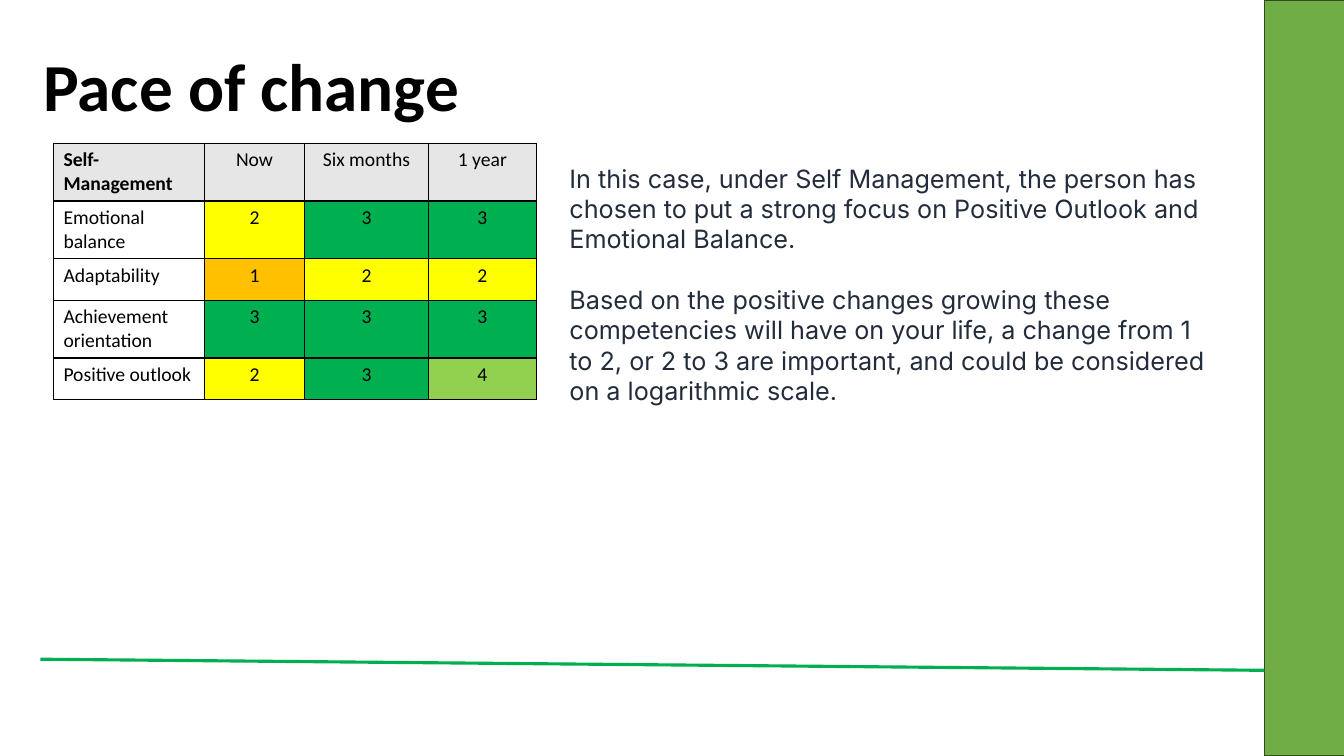
from dataclasses import dataclass

from lxml.etree import SubElement
from pptx import Presentation
from pptx.dml.color import RGBColor
from pptx.enum.shapes import MSO_CONNECTOR, MSO_SHAPE
from pptx.enum.text import MSO_ANCHOR, PP_ALIGN
from pptx.oxml.ns import qn
from pptx.util import Inches, Pt

BLACK, GREEN, HEADER_GREY = "000000", "00B050", "E7E6E6"
SCORE_FILLS = {1: "FFC000", 2: "FFFF00", 3: GREEN, 4: "92D050"}
HEADINGS = ["Self-Management", "Now", "Six months", "1 year"]
COLUMN_WIDTHS = [1.5, 0.99, 1.23, 1.07]
ROW_HEIGHT = 0.41
COMMENTS = [
    "In this case, under Self Management, the person has chosen to put a strong "
    "focus on Positive Outlook and Emotional Balance.",
    "Based on the positive changes growing these competencies will have on your "
    "life, a change from 1 to 2, or 2 to 3 are important, and could be considered "
    "on a logarithmic scale.",
]


@dataclass
class Competency:
    name: str
    scores: tuple[int, int, int]


COMPETENCIES = [
    Competency("Emotional balance", (2, 3, 3)),
    Competency("Adaptability", (1, 2, 2)),
    Competency("Achievement orientation", (3, 3, 3)),
    Competency("Positive outlook", (2, 3, 4)),
]


def rgb(color: str) -> RGBColor:
    return RGBColor.from_string(color)


def add_text(p, text: str, color: str, **formats) -> None:
    r = p.add_run()
    r.text = text
    r.font.color.rgb = rgb(color)
    for name, value in formats.items():
        setattr(r.font, name, value)


def add_cell_borders(cell) -> None:
    """Draw a thin black line on all four sides, ahead of the cell's fill."""
    tcPr = cell._tc.get_or_add_tcPr()
    for i, side in enumerate(("lnL", "lnR", "lnT", "lnB")):
        ln = SubElement(tcPr, qn(f"a:{side}"), w=str(Pt(1)))
        SubElement(SubElement(ln, qn("a:solidFill")), qn("a:srgbClr"), val=BLACK)
        tcPr.insert(i, ln)


def fill_cell(cell, text: str, fill: str | None, bold: bool, centred: bool) -> None:
    p = cell.text_frame.paragraphs[0]
    p.alignment = PP_ALIGN.CENTER if centred else PP_ALIGN.LEFT
    add_text(p, text, BLACK, name="Calibri", size=Pt(14), bold=bold)
    if fill:
        cell.fill.solid()
        cell.fill.fore_color.rgb = rgb(fill)
    else:
        cell.fill.background()
    add_cell_borders(cell)


def add_side_band(s) -> None:
    sp = s.shapes.add_shape(MSO_SHAPE.RECTANGLE, Inches(12.54), 0, Inches(0.8), Inches(7.5))
    sp.shadow.inherit = False
    sp.fill.solid()
    sp.fill.fore_color.rgb = rgb("70AD47")
    sp.line.color.rgb = rgb("314C1F")
    sp.line.width = Pt(1)


def add_footer_line(s) -> None:
    line = s.shapes.add_connector(
        MSO_CONNECTOR.STRAIGHT, Inches(12.54), Inches(6.65), Inches(0.4), Inches(6.54))
    line.line.color.rgb = rgb(GREEN)
    line.line.width = Pt(2.25)
    SubElement(line._element.spPr, qn("a:effectLst"))


def format_title(title) -> None:
    title.left, title.top = Inches(0.33), Inches(0.26)
    title.width, title.height = Inches(10), Inches(1.04)
    tf = title.text_frame
    tf.vertical_anchor = MSO_ANCHOR.BOTTOM
    p = tf.paragraphs[0]
    p.alignment = PP_ALIGN.LEFT
    p.line_spacing = 0.9
    add_text(p, "Pace of change", BLACK, name="Calibri", size=Pt(48), bold=True)


def add_score_table(s) -> None:
    rows = len(COMPETENCIES) + 1
    table = s.shapes.add_table(
        rows, len(HEADINGS), Inches(0.53), Inches(1.42),
        Inches(sum(COLUMN_WIDTHS)), Inches(ROW_HEIGHT * rows)).table
    table.first_row = table.horz_banding = False
    for column, width in zip(table.columns, COLUMN_WIDTHS):
        column.width = Inches(width)
    for row in table.rows:
        row.height = Inches(ROW_HEIGHT)
    for c, heading in enumerate(HEADINGS):
        fill_cell(table.cell(0, c), heading, HEADER_GREY, bold=c == 0, centred=c > 0)
    for r, competency in enumerate(COMPETENCIES, 1):
        fill_cell(table.cell(r, 0), competency.name, None, bold=False, centred=False)
        for c, score in enumerate(competency.scores, 1):
            fill_cell(table.cell(r, c), str(score), SCORE_FILLS[score], bold=False, centred=True)


def add_comments(s) -> None:
    tf = s.shapes.add_textbox(Inches(5.55), Inches(1.57), Inches(6.54), Inches(2.52)).text_frame
    tf.word_wrap = True
    for i, comment in enumerate(COMMENTS):
        p = tf.add_paragraph() if i else tf.paragraphs[0]
        p.space_before = Pt(21.8 if i else 0)
        add_text(p, comment, "232C3B", name="Inter", size=Pt(18))


def main() -> None:
    prs = Presentation()
    prs.slide_width, prs.slide_height = Inches(13.33), Inches(7.5)
    s = prs.slides.add_slide(prs.slide_layouts[5])
    add_side_band(s)
    add_footer_line(s)
    format_title(s.shapes.title)
    add_score_table(s)
    add_comments(s)
    prs.save("out.pptx")


if __name__ == "__main__":
    main()
